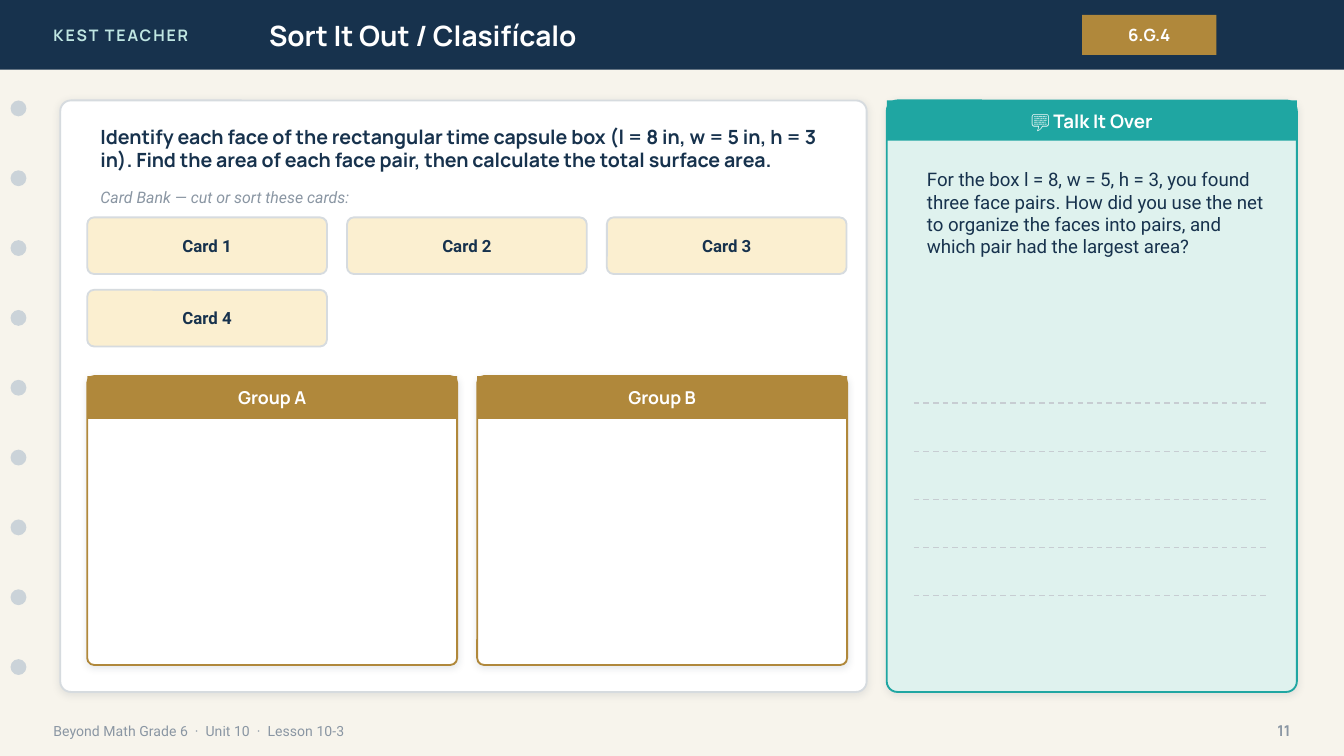
from lxml import etree
from pptx import Presentation
from pptx.dml.color import RGBColor
from pptx.enum import dml, shapes, text
from pptx.oxml import ns
from pptx.util import Cm, Pt

NAVY = RGBColor(0x17, 0x32, 0x4D)
CREAM = RGBColor(0xF7, 0xF4, 0xEC)
WHITE = RGBColor(0xFF, 0xFF, 0xFF)
MINT = RGBColor(0xBF, 0xE6, 0xE2)
PALE_MINT = RGBColor(0xDF, 0xF2, 0xEE)
TEAL = RGBColor(0x1F, 0xA6, 0xA2)
GOLD = RGBColor(0xB0, 0x88, 0x3B)
PALE_GOLD = RGBColor(0xFB, 0xEF, 0xD0)
BORDER = RGBColor(0xD6, 0xDB, 0xDF)
HOLE = RGBColor(0xCB, 0xD3, 0xD9)
RULE = RGBColor(0xC7, 0xCD, 0xD2)
GREY = RGBColor(0x8A, 0x96, 0xA3)
SHADOW = RGBColor(0x1C, 0x2E, 0x42)

HEADING_FONT = "Manrope"
BODY_FONT = "Roboto"
LEFT, CENTER, RIGHT = text.PP_ALIGN.LEFT, text.PP_ALIGN.CENTER, text.PP_ALIGN.RIGHT
MIDDLE, TOP = text.MSO_ANCHOR.MIDDLE, text.MSO_ANCHOR.TOP
RECTANGLE = shapes.MSO_SHAPE.RECTANGLE
ROUNDED = shapes.MSO_SHAPE.ROUNDED_RECTANGLE
OVAL = shapes.MSO_SHAPE.OVAL


def set_text(shape, content, size, color, font=HEADING_FONT, bold=False,
             italic=False, align=LEFT, anchor=MIDDLE):
    frame = shape.text_frame
    frame.text = content
    frame.word_wrap = True
    frame.auto_size = text.MSO_AUTO_SIZE.NONE
    frame.vertical_anchor = anchor
    paragraph = frame.paragraphs[0]
    paragraph.alignment = align
    run = paragraph.runs[0]
    run.font.name = font
    run.font.size = Pt(size)
    run.font.bold = bold
    run.font.italic = italic
    run.font.color.rgb = color
    return run


def add_text(slide, box, content, size, color, **style):
    """Add a text box; box is left, top, width, height in centimetres."""
    shape = slide.shapes.add_textbox(*map(Cm, box))
    return set_text(shape, content, size, color, **style)


def add_block(slide, kind, box, fill, line=None, radius=None):
    """Add a flat shape; box and radius are in centimetres."""
    shape = slide.shapes.add_shape(kind, *map(Cm, box))
    shape.shadow.inherit = False
    shape.fill.solid()
    shape.fill.fore_color.rgb = fill
    if line is None:
        shape.line.fill.background()
    else:
        shape.line.color.rgb = line
        shape.line.width = Pt(1)
    if radius is not None:
        shape.adjustments[0] = radius / min(box[2:])
    return shape


def add_soft_shadow(shape):
    effects = shape._element.spPr.find(ns.qn("a:effectLst"))
    shadow = etree.SubElement(effects, ns.qn("a:outerShdw"), blurRad=str(Pt(4)),
                              dist=str(Pt(1)), dir="5400000", algn="bl", rotWithShape="0")
    color = etree.SubElement(shadow, ns.qn("a:srgbClr"), val=str(SHADOW))
    etree.SubElement(color, ns.qn("a:alpha"), val="10000")


def add_panel(slide, box, fill, line, radius):
    add_soft_shadow(add_block(slide, ROUNDED, box, fill, line, radius))


def add_headed_panel(slide, box, fill, color, radius, heading, heading_height, size):
    add_panel(slide, box, fill, color, radius)
    left, top, width, _ = box
    bar = add_block(slide, RECTANGLE, (left, top, width, heading_height), color)
    set_text(bar, heading, size, WHITE, bold=True, align=CENTER)


def add_writing_line(slide, left, right, top):
    line = slide.shapes.add_connector(shapes.MSO_CONNECTOR.STRAIGHT,
                                      Cm(left), Cm(top), Cm(right), Cm(top))
    line.line.color.rgb = RULE
    line.line.width = Pt(0.75)
    line.line.dash_style = dml.MSO_LINE.DASH
    etree.SubElement(line._element.spPr, ns.qn("a:effectLst"))


def add_header(slide):
    add_block(slide, RECTANGLE, (0, 0, 25.4, 1.32), NAVY)
    brand = add_text(slide, (0.76, 0, 6.1, 1.32), "KEST TEACHER", 8.5, MINT, bold=True)
    brand.font._element.set("spc", "100")

    title = slide.shapes.title
    title.left, title.top, title.width, title.height = map(Cm, (4.83, 0, 14.22, 1.32))
    set_text(title, "Sort It Out / Clasifícalo", 15, WHITE, bold=True)
    # The title placeholder comes first, so bring it in front of the band.
    title.element.getparent().append(title.element)

    standard = add_block(slide, RECTANGLE, (20.45, 0.28, 2.54, 0.76), GOLD)
    set_text(standard, "6.G.4", 9, WHITE, bold=True, align=CENTER)


def add_binder_holes(slide):
    for index in range(9):
        add_block(slide, OVAL, (0.2, 1.9 + index * 1.32, 0.3, 0.3), HOLE)


def add_footer(slide):
    add_text(slide, (0.76, 13.46, 17.78, 0.71),
             "Beyond Math Grade 6  ·  Unit 10  ·  Lesson 10-3", 7.5, GREY, font=BODY_FONT)
    add_text(slide, (23.37, 13.46, 1.27, 0.71), "11", 8, GREY, bold=True, align=RIGHT)


def add_sorting_activity(slide):
    add_panel(slide, (1.14, 1.9, 15.24, 11.18), WHITE, BORDER, 0.2)
    add_text(slide, (1.65, 2.29, 14.22, 1.02),
             "Identify each face of the rectangular time capsule box "
             "(l = 8 in, w = 5 in, h = 3 in). Find the area of each face pair, "
             "then calculate the total surface area.", 10.5, NAVY, bold=True)
    add_text(slide, (1.65, 3.43, 14.22, 0.61), "Card Bank — cut or sort these cards:",
             8.5, GREY, font=BODY_FONT, italic=True)

    for index in range(4):
        row, column = divmod(index, 3)
        box = (1.65 + column * 4.91, 4.11 + row * 1.37, 4.53, 1.07)
        card = add_block(slide, ROUNDED, box, PALE_GOLD, BORDER, 0.13)
        set_text(card, f"Card {index + 1}", 9, NAVY, font=BODY_FONT, bold=True, align=CENTER)

    for index, name in enumerate("AB"):
        box = (1.65 + index * 7.37, 7.11, 6.99, 5.46)
        add_headed_panel(slide, box, WHITE, GOLD, 0.13, f"Group {name}", 0.81, 9.5)


def add_discussion(slide):
    add_headed_panel(slide, (16.76, 1.9, 7.75, 11.18), PALE_MINT, TEAL, 0.2,
                     "💬 Talk It Over", 0.76, 10)
    add_text(slide, (17.27, 3.05, 6.86, 3.81),
             "For the box l = 8, w = 5, h = 3, you found three face pairs. "
             "How did you use the net to organize the faces into pairs, "
             "and which pair had the largest area?", 10, NAVY, font=BODY_FONT, anchor=TOP)
    for index in range(5):
        add_writing_line(slide, 17.27, 24, 7.62 + index * 0.91)


def main():
    presentation = Presentation()
    presentation.slide_width, presentation.slide_height = Cm(25.4), Cm(14.29)
    slide = presentation.slides.add_slide(presentation.slide_layouts[5])
    slide.background.fill.solid()
    slide.background.fill.fore_color.rgb = CREAM
    add_header(slide)
    add_binder_holes(slide)
    add_footer(slide)
    add_sorting_activity(slide)
    add_discussion(slide)
    presentation.save("out.pptx")


if __name__ == "__main__":
    main()
